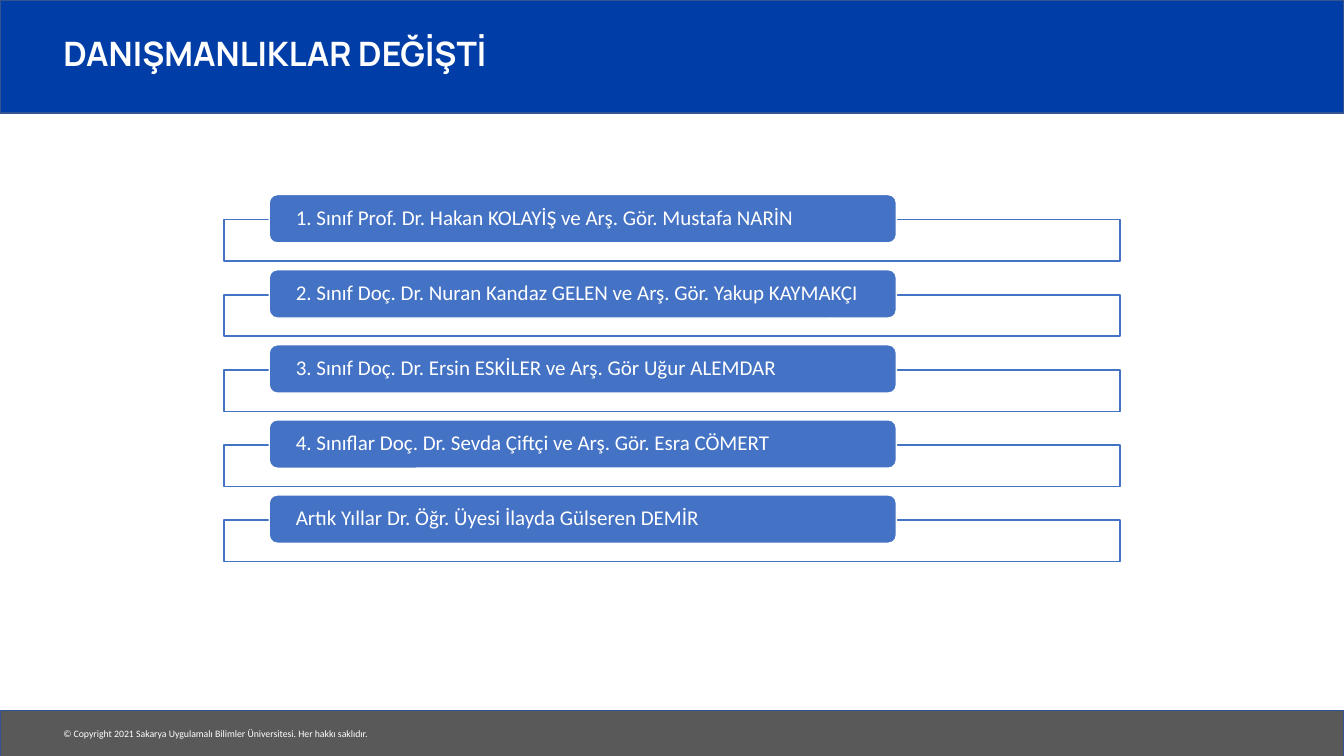
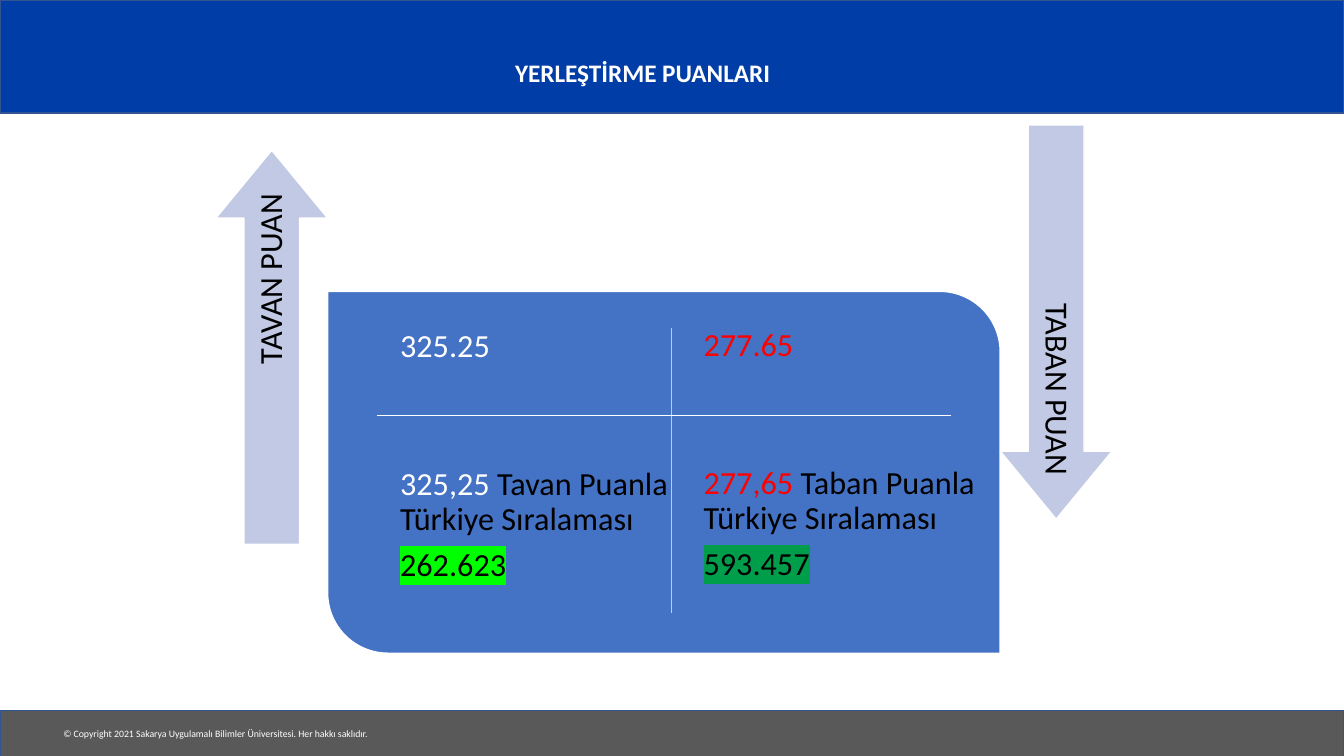
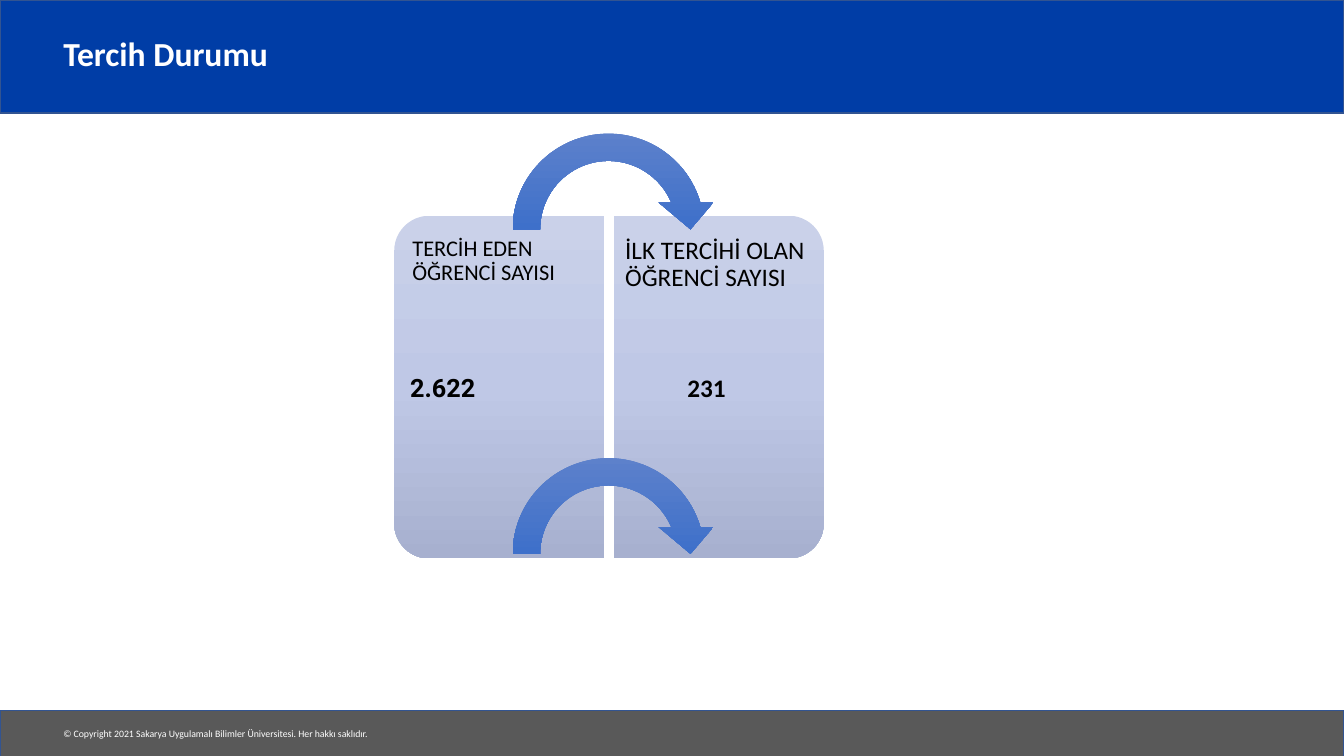
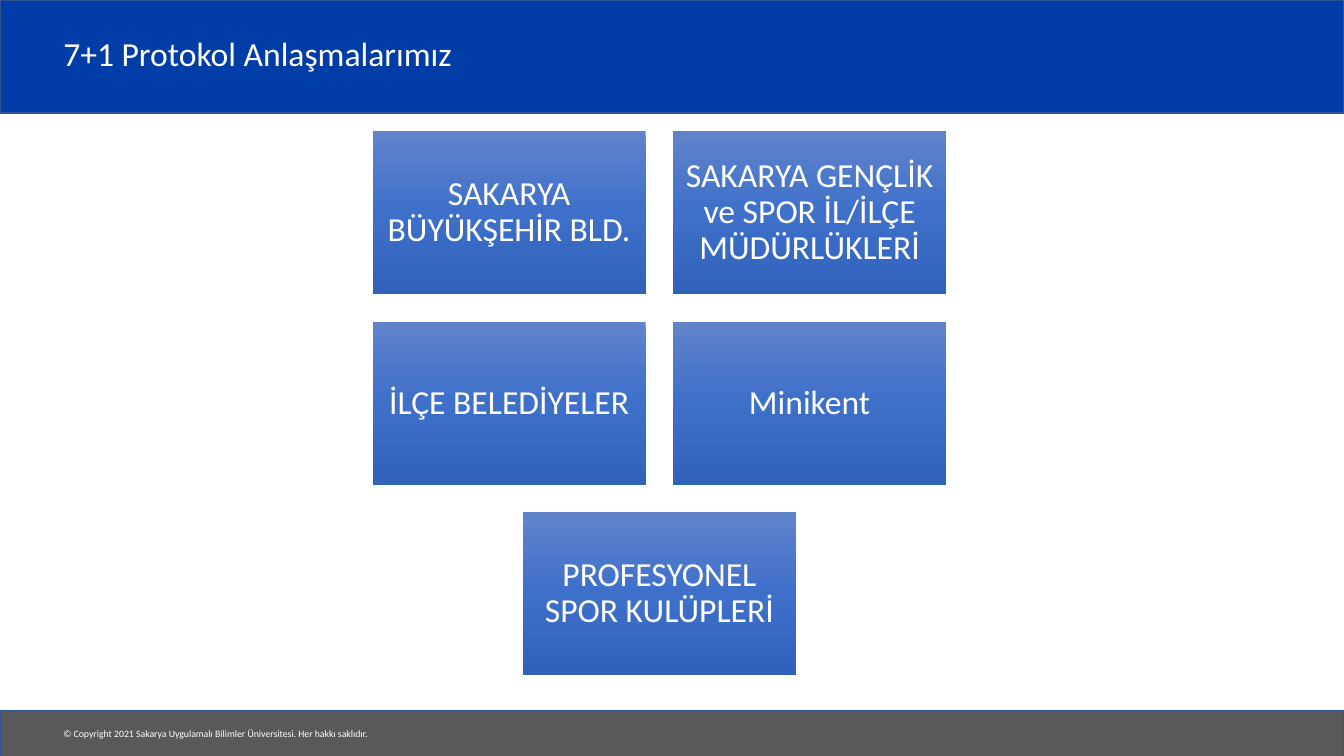
from pptx import Presentation
from pptx.dml.color import RGBColor
from pptx.enum.shapes import MSO_CONNECTOR, MSO_SHAPE as Shape
from pptx.enum.text import MSO_ANCHOR as Anchor, PP_ALIGN as Align
from pptx.oxml import parse_xml
from pptx.oxml.ns import nsdecls, qn
from pptx.util import Inches, Pt

NAVY, GRAY, EDGE = "003DA6", "595959", "325491"
BLUE, PALE = "4472C4", "C1C9E4"
WHITE, BLACK, RED = "FFFFFF", "000000", "FF0000"
DEEP = ("6183CB", "3E70CA", "3062BB")
SOFT = ("CAD1E9", "BFC8E6", "A7B0CF")
FONT = "Calibri"
WIDE, HIGH = 13.33, 7.5

FOOTER = "© Copyright 2021 Sakarya Uygulamalı Bilimler Üniversitesi. Her hakkı saklıdır."
ADVISERS = [
    "1. Sınıf Prof. Dr. Hakan KOLAYİŞ ve Arş. Gör. Mustafa NARİN",
    "2. Sınıf Doç. Dr. Nuran Kandaz GELEN ve Arş. Gör. Yakup KAYMAKÇI",
    "3. Sınıf Doç. Dr. Ersin ESKİLER ve Arş. Gör Uğur ALEMDAR",
    "4. Sınıflar Doç. Dr. Sevda Çiftçi ve Arş. Gör. Esra CÖMERT",
    "Artık Yıllar Dr. Öğr. Üyesi İlayda Gülseren DEMİR",
]
# left, top, score, score in the sentence, rest of the sentence, rank, colour, highlight
SCORES = [
    (3.87, 3.17, "325.25", "325,25", " Tavan Puanla Türkiye Sıralaması", "262.623", WHITE, "00FF00"),
    (6.88, 3.16, "277.65", "277,65", " Taban Puanla Türkiye Sıralaması", "593.457", RED, "009E4A"),
]
ARROWS = [(0.74, 2.89, 270, "TAVAN PUAN"), (8.52, 2.64, 90, "TABAN PUAN")]
# panel left, rotation, text left, label, size, insets
PANELS = [
    (3.25, 270, 4.02, "TERCİH EDEN ÖĞRENCİ SAYISI", 16, (0.07, 0.11, 0.1, 0.11)),
    (5.43, 90, 6.09, "İLK TERCİHİ OLAN ÖĞRENCİ SAYISI", 18, (0.11, 0.12, 0.07, 0.12)),
]
COUNTS = [(3.97, "2.622", "Roboto"), (6.72, "231", FONT)]
PARTNERS = [
    ["SAKARYA BÜYÜKŞEHİR BLD.", "SAKARYA GENÇLİK ve SPOR İL/İLÇE MÜDÜRLÜKLERİ"],
    ["İLÇE BELEDİYELER", "Minikent"],
    ["PROFESYONEL SPOR KULÜPLERİ"],
]


def rgb(code):
    return RGBColor.from_string(code)


def style(run, size, color, bold=False, font=FONT):
    run.font.name, run.font.size, run.font.bold = font, Pt(size), bold
    run.font.color.rgb = rgb(color)


def mark(run, color):
    """Highlight a run."""
    node = parse_xml(f'<a:highlight {nsdecls("a")}><a:srgbClr val="{color}"/></a:highlight>')
    run.font._element.find(qn("a:latin")).addprevious(node)


def setup(frame, insets, anchor):
    frame.word_wrap = True
    frame.vertical_anchor = anchor
    (frame.margin_left, frame.margin_top,
     frame.margin_right, frame.margin_bottom) = map(Inches, insets)


def write(shape, text, size, color=WHITE, bold=False, font=FONT, align=Align.LEFT,
          anchor=Anchor.TOP, insets=(0.1, 0.05, 0.1, 0.05), tight=True):
    """Put one paragraph into a shape."""
    frame = shape.text_frame
    setup(frame, insets, anchor)
    frame.text = text
    para = frame.paragraphs[0]
    para.alignment = align
    if tight:
        para.line_spacing = 0.9
    style(para.runs[0], size, color, bold, font)


def box(slide, left, top, width, height):
    return slide.shapes.add_textbox(*map(Inches, (left, top, width, height)))


def draw(slide, kind, left, top, width, height, fill, line=None, turn=0, adjust=()):
    """Add a preset shape; a tuple as fill gives a downward gradient."""
    shape = slide.shapes.add_shape(kind, *map(Inches, (left, top, width, height)))
    shape.shadow.inherit = False
    shape.rotation = turn
    for i, value in enumerate(adjust):
        shape.adjustments[i] = value
    if isinstance(fill, tuple):
        stops = "".join(f'<a:gs pos="{i * 50000}"><a:srgbClr val="{code}"/></a:gs>'
                        for i, code in enumerate(fill))
        node = parse_xml(f'<a:gradFill {nsdecls("a")} rotWithShape="0"><a:gsLst>{stops}'
                         '</a:gsLst><a:lin ang="5400000" scaled="0"/></a:gradFill>')
        shape._element.spPr.find(qn("a:prstGeom")).addnext(node)
    else:
        shape.fill.solid()
        shape.fill.fore_color.rgb = rgb(fill)
    if line:
        shape.line.color.rgb = rgb(line)
        shape.line.width = Pt(1)
    else:
        shape.line.fill.background()
    return shape


def rule(slide, x1, y1, x2, y2, color, width):
    line = slide.shapes.add_connector(MSO_CONNECTOR.STRAIGHT, *map(Inches, (x1, y1, x2, y2)))
    line.line.color.rgb = rgb(color)
    line.line.width = Pt(width)
    line._element.spPr.append(parse_xml(f'<a:effectLst {nsdecls("a")}/>'))


def start(deck, title=None, bold=True, font=FONT):
    """Add a slide with its bands, footer and title."""
    slide = deck.slides.add_slide(deck.slide_layouts[6])
    draw(slide, Shape.RECTANGLE, 0, 0, WIDE, 1.12, NAVY, EDGE)
    draw(slide, Shape.RECTANGLE, 0, 7.05, WIDE, 0.46, GRAY, EDGE)
    write(box(slide, 0.53, 7.17, 4, 0.22), FOOTER, 7, tight=False)
    if title:
        write(box(slide, 0.53, 0.19, 11.03, 0.73), title, 24, bold=bold, font=font,
              anchor=Anchor.MIDDLE)
    return slide


def advisers(deck):
    slide = start(deck, "DANIŞMANLIKLAR DEĞİŞTİ", font="Manrope")
    for i, name in enumerate(ADVISERS):
        top = 1.93 + i * 0.745
        draw(slide, Shape.RECTANGLE, 2.22, top + 0.25, 8.89, 0.41, WHITE, BLUE)
        bar = draw(slide, Shape.ROUNDED_RECTANGLE, 2.67, top, 6.22, 0.48, BLUE, WHITE)
        write(bar, name, 15, anchor=Anchor.MIDDLE, insets=(0.24, 0, 0.24, 0))


def scores(deck):
    slide = start(deck)
    draw(slide, Shape.ROUND_2_DIAG_RECTANGLE, 3.25, 2.89, 6.67, 3.59, BLUE, WHITE,
         adjust=(0, 0.167))
    rule(slide, 6.66, 3.25, 6.66, 6.08, PALE, 1)
    for left, top, score, point, rest, rank, color, glow in SCORES:
        frame = box(slide, left, top, 2.89, 3.04).text_frame
        setup(frame, (0.1,) * 4, Anchor.TOP)
        lines = [[(score, color)], [(point, color), (rest, BLACK)], [(rank, BLACK)]]
        for i, parts in enumerate(lines):
            para = frame.add_paragraph() if i else frame.paragraphs[0]
            para.line_spacing, para.space_after = 0.9, Pt(8)
            for text, shade in parts:
                run = para.add_run()
                run.text = text
                style(run, 23, shade)
        frame.paragraphs[1].space_before = Pt(66)
        mark(run, glow)
    for left, top, turn, label in ARROWS:
        arrow = draw(slide, Shape.RIGHT_ARROW, left, top, 3.91, 1.11, PALE, WHITE, turn,
                     (0.498, 0.607))
        write(arrow, label, 23, BLACK, align=Align.RIGHT, anchor=Anchor.MIDDLE,
              insets=(0.1,) * 4)
    rule(slide, 3.74, 4.12, 9.43, 4.12, WHITE, 0.5)
    write(box(slide, 5.01, 0.52, 3, 0.4), "YERLEŞTİRME PUANLARI", 18, bold=True, tight=False)


def choices(deck):
    slide = start(deck, "Tercih Durumu")
    for left, turn, inner, label, size, insets in PANELS:
        draw(slide, Shape.ROUND_2_SAME_RECTANGLE, left, 2.8, 3.4, 2.08, SOFT, turn=turn,
             adjust=(0.167, 0))
        write(box(slide, inner, 2.24, 1.98, 3.2), label, size, BLACK, insets=insets)
    for top in (1.19, 4.41):
        draw(slide, Shape.CIRCULAR_ARROW, 4.95, top, 2.17, 2.17, DEEP,
             adjust=(0.125, 11.423, 204.577, 108, 0.125))
    for left, count, font in COUNTS:
        write(box(slide, left, 3.64, 1.2, 0.4), count, 18, BLACK, True, font, tight=False)


def partners(deck):
    slide = start(deck, "7+1 Protokol Anlaşmalarımız", bold=False)
    width, height, gap, middle = 2.71, 1.62, 0.27, 6.54
    for i, row in enumerate(PARTNERS):
        left = middle - (len(row) * (width + gap) - gap) / 2
        for j, name in enumerate(row):
            tile = draw(slide, Shape.RECTANGLE, left + j * (width + gap),
                        1.3 + i * (height + gap), width, height, DEEP)
            write(tile, name, 24, align=Align.CENTER, anchor=Anchor.MIDDLE, insets=(0.1,) * 4)


def main():
    deck = Presentation()
    deck.slide_width, deck.slide_height = Inches(WIDE), Inches(HIGH)
    for build in (advisers, scores, choices, partners):
        build(deck)
    deck.save("out.pptx")


if __name__ == "__main__":
    main()
